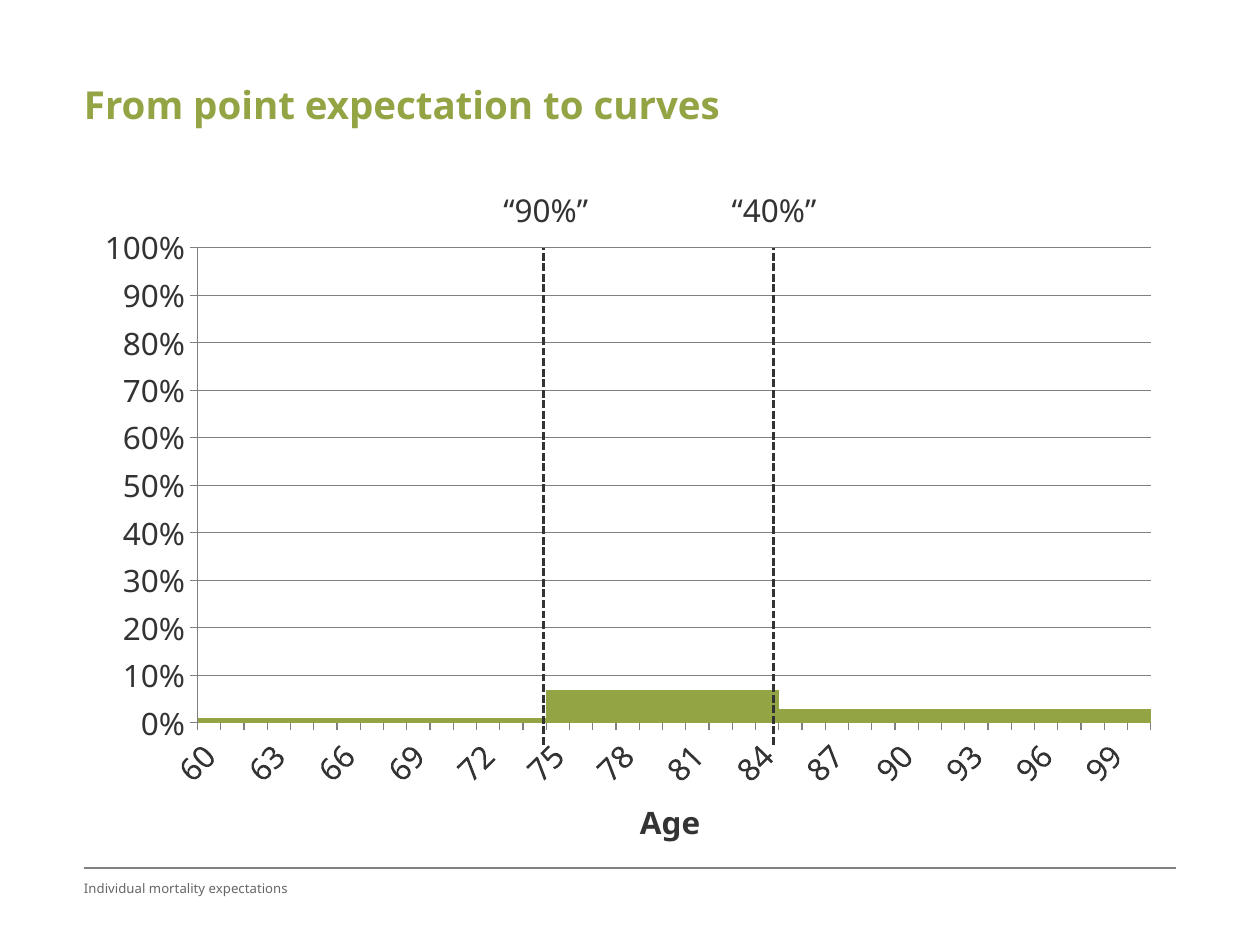
"""Build a slide that turns point mortality expectations into a stepped chart."""
from lxml import etree
from pptx import Presentation
from pptx.chart.data import CategoryChartData
from pptx.dml.color import RGBColor
from pptx.enum import chart as ch, dml, shapes, text
from pptx.oxml import parse_xml
from pptx.oxml.ns import nsdecls, qn
from pptx.util import Pt

GREEN = RGBColor(0x93, 0xA4, 0x45)
DARK = RGBColor(0x33, 0x33, 0x33)
MID = RGBColor(0x66, 0x66, 0x66)
GREY = RGBColor(0x80, 0x80, 0x80)
FACE = "Noto Sans"
FIRST, LAST = 60, 100
BANDS = [(60, 74, 0.01), (75, 84, 0.07), (85, 100, 0.03)]
MARKS = [(310.5, 280.6, "“90%”"), (442.2, 411, "“40%”")]
PLOT = {"layoutTarget": "inner", "xMode": "edge", "yMode": "edge",
        "x": 0.104, "y": 0.048, "w": 0.873, "h": 0.763}
HEAD = {"xMode": "edge", "yMode": "edge", "x": 0.504, "y": 0.922}


class Deck:
    """Hold the style and the current slide."""

    def __init__(self):
        self.prs = Presentation()
        self.prs.slide_width, self.prs.slide_height = Pt(720), Pt(540)
        self.slide = self.prs.slides.add_slide(self.prs.slide_layouts[5])

    def font(self, font, size, color, bold=False):
        font.name, font.size, font.bold = FACE, Pt(size), bold
        font.color.rgb = color

    def fill(self, box, words, size, color, bold=False, inset=0):
        frame = box.text_frame
        frame.margin_left = frame.margin_right = Pt(inset)
        frame.margin_top = frame.margin_bottom = Pt(inset / 2)
        frame.text = words
        para = frame.paragraphs[0]
        para.alignment = text.PP_ALIGN.LEFT
        self.font(para.font, size, color, bold)
        return frame

    def title(self, words, *area):
        box = self.slide.shapes.title
        box.left, box.top, box.width, box.height = map(Pt, area)
        frame = self.fill(box, words, 22, GREEN, True)
        frame.vertical_anchor = text.MSO_ANCHOR.TOP
        frame.auto_size = text.MSO_AUTO_SIZE.NONE

    def note(self, words, area, size, color, inset=0, wrap=True):
        box = self.slide.shapes.add_textbox(*map(Pt, area))
        self.fill(box, words, size, color, inset=inset).word_wrap = wrap

    def line(self, ends, color, width, dash=None):
        rule = self.slide.shapes.add_connector(
            shapes.MSO_CONNECTOR.STRAIGHT, *map(Pt, ends))
        rule.line.color.rgb, rule.line.width = color, Pt(width)
        if dash:
            rule.line.dash_style = dash
        etree.SubElement(rule._element.spPr, qn("a:effectLst"))

    def axis(self, axis):
        axis.major_tick_mark = ch.XL_TICK_MARK.OUTSIDE
        axis.minor_tick_mark = ch.XL_TICK_MARK.NONE
        axis.format.line.color.rgb = GREY
        axis.format.line.width = Pt(0.75)
        self.font(axis.tick_labels.font, 18, DARK)

    def chart(self, *area):
        data = CategoryChartData(number_format="0%")
        ages = range(FIRST, LAST + 1)
        data.categories = [f"{age} ." if age == LAST else str(age) for age in ages]
        for num, (low, high, rate) in enumerate(BANDS, 1):
            data.add_series(f"Series {num}",
                            [rate if low <= age <= high else None for age in ages])
        chart = self.slide.shapes.add_chart(
            ch.XL_CHART_TYPE.COLUMN_STACKED, *map(Pt, area), data).chart
        chart.has_legend = chart.has_title = False
        self.font(chart.font, 18, DARK)

        plot = chart.plots[0]
        plot.gap_width, plot.overlap = 0, 100
        plot.vary_by_categories = False
        for part in plot.series:
            part.format.fill.solid()
            part.format.fill.fore_color.rgb = GREEN

        val, cat = chart.value_axis, chart.category_axis
        self.axis(val)
        self.axis(cat)
        val.minimum_scale, val.maximum_scale, val.major_unit = 0, 1, 0.1
        val.tick_labels.number_format = "0%"
        val.tick_labels.number_format_is_linked = False
        grid = val.major_gridlines.format.line
        grid.color.rgb, grid.width = GREY, Pt(0.75)

        head = cat.axis_title.text_frame
        head.text = "Age"
        self.font(head.paragraphs[0].font, 18, DARK, True)
        cat._element.find(qn("c:txPr")).find(qn("a:bodyPr")).set("rot", "-2700000")
        last = cat._element.find(qn("c:noMultiLvlLbl"))
        for tag, step in (("tickLblSkip", 3), ("tickMarkSkip", 1)):
            last.addprevious(parse_xml(f'<c:{tag} {nsdecls("c")} val="{step}"/>'))
        self.place(chart._chartSpace.chart.plotArea, 0, PLOT)
        self.place(cat._element.find(qn("c:title")), 1, HEAD)

    def place(self, node, spot, rows):
        for old in node.findall(qn("c:layout")):
            node.remove(old)
        body = "".join(f'<c:{tag} val="{val}"/>' for tag, val in rows.items())
        node.insert(spot, parse_xml(
            f'<c:layout {nsdecls("c")}><c:manualLayout>{body}'
            "</c:manualLayout></c:layout>"))


def main():
    deck = Deck()
    deck.line((48, 496, 672, 496), GREY, 0.75)
    deck.title("From point expectation to curves", 48, 46.5, 516, 32)
    deck.chart(48, 124.5, 624, 363)
    deck.note("Individual mortality expectations", (48, 503, 228, 29), 7.5, MID)
    for x, left, words in MARKS:
        deck.line((x, 425.5, x, 142), DARK, 1.5, dml.MSO_LINE.SQUARE_DOT)
        deck.note(words, (left, 105.5, 67.5, 29), 18, DARK, 7.2, False)
    deck.prs.save("out.pptx")


if __name__ == "__main__":
    main()
